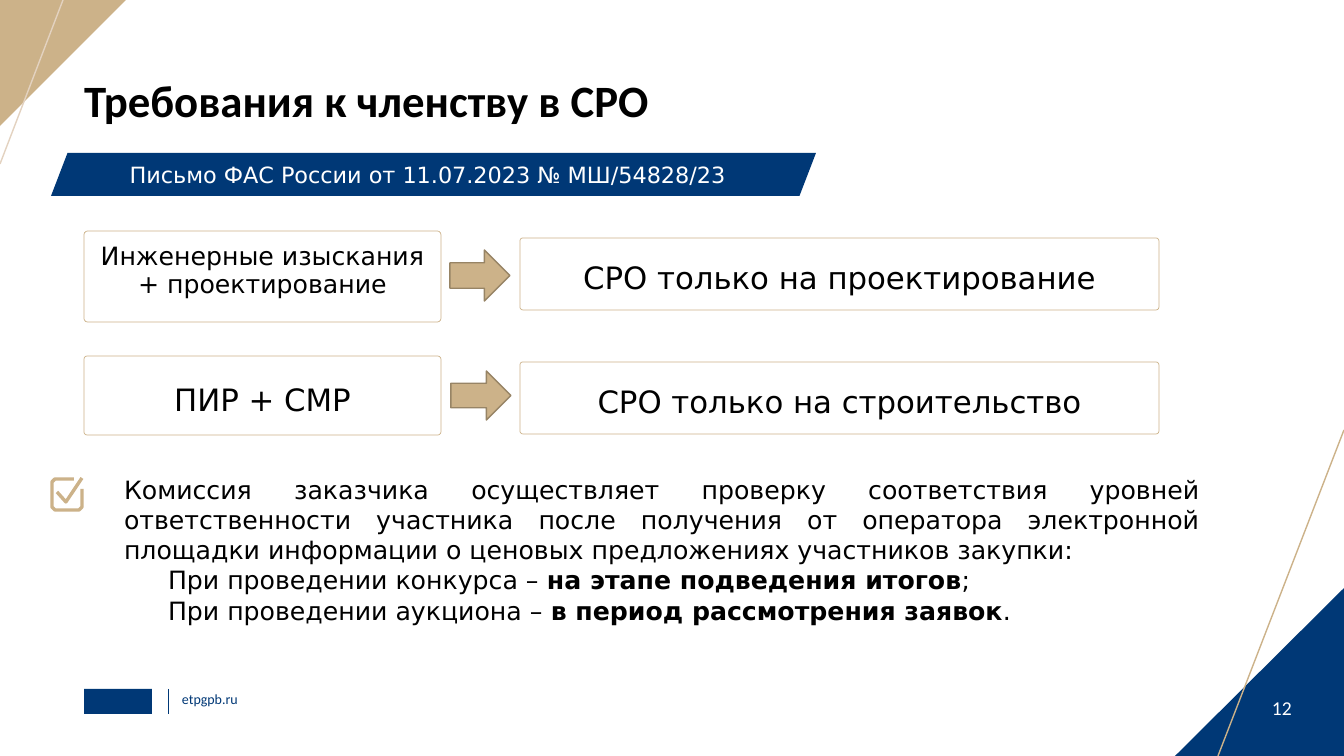
from lxml import etree
from pptx import Presentation
from pptx import util as u
from pptx.dml.color import RGBColor
from pptx.enum import shapes, text
from pptx.oxml.ns import qn

TITLE = "Требования к членству в СРО"
LETTER = "Письмо ФАС России от 11.07.2023 № МШ/54828/23"
# work lines, work size pt, work (top, height), arrow (left, top, height), result, result top
RULES = [
    (["Инженерные изыскания", "+ проектирование"], 18, (231, 91), (450, 250, 51),
     "СРО только на проектирование", 238),
    (["ПИР + СМР"], 22, (356, 79), (451, 371, 49),
     "СРО только на строительство", 362),
]
CHECK = ("Комиссия заказчика осуществляет проверку соответствия уровней "
         "ответственности участника после получения от оператора электронной "
         "площадки информации о ценовых предложениях участников закупки:")
STAGES = [
    ("При проведении конкурса – ", "на этапе подведения итогов", ";"),
    ("При проведении аукциона – ", "в период рассмотрения заявок", "."),
]
SITE, PAGE = "etpgpb.ru", "12"
CHECKBOX = [(74, 479), (55, 479), (52, 482), (52, 507), (55, 510),
            (79, 510), (82, 507), (82, 489)]
TICK = [(57, 492), (66, 502), (82, 478)]

COLORS = {"navy": "003876", "sand": "CCB289", "pale": "E3D2C0",
          "brown": "978465", "white": "FFFFFF", "black": "000000"}
HEAD, BODY = "Calibri", "DejaVu Sans"
PX = 914400 / 100.8
LEFT, CENTER, JUSTIFY = (text.PP_ALIGN.LEFT, text.PP_ALIGN.CENTER,
                         text.PP_ALIGN.JUSTIFY)
TOP, MIDDLE, BOTTOM = (text.MSO_ANCHOR.TOP, text.MSO_ANCHOR.MIDDLE,
                       text.MSO_ANCHOR.BOTTOM)
KIND = shapes.MSO_SHAPE


def px(*lengths):
    return [u.Emu(round(n * PX)) for n in lengths]


def rgb(name):
    return RGBColor.from_string(COLORS[name])


def outline(line, color, width):
    line.color.rgb = rgb(color)
    line.width = u.Pt(width)


def add_shape(kind, box, fill, border=None, width=1, adjust=None):
    shape = slide.shapes.add_shape(kind, *px(*box))
    shape.shadow.inherit = False
    shape.fill.solid()
    shape.fill.fore_color.rgb = rgb(fill)
    if border:
        outline(shape.line, border, width)
    else:
        shape.line.fill.background()
    if adjust is not None:
        shape.adjustments[0] = adjust
    return shape


def add_line(start, end, color, width=1):
    line = slide.shapes.add_connector(shapes.MSO_CONNECTOR.STRAIGHT,
                                      *px(*start, *end))
    outline(line.line, color, width)
    etree.SubElement(line._element.spPr, qn("a:effectLst"))


def write(shape, paragraphs, size, color="black", font=BODY, align=LEFT,
          anchor=TOP, insets=(0, 0, 0, 0), spacing=None):
    """Fill a shape; a paragraph is a string or a (plain, bold, plain) tuple."""
    frame = shape.text_frame
    frame.word_wrap = True
    frame.vertical_anchor = anchor
    (frame.margin_left, frame.margin_top,
     frame.margin_right, frame.margin_bottom) = px(*insets)
    for i, content in enumerate(paragraphs):
        p = frame.add_paragraph() if i else frame.paragraphs[0]
        p.alignment = align
        if spacing:
            p.line_spacing = spacing
        p.font.size, p.font.name = u.Pt(size), font
        p.font.color.rgb = rgb(color)
        if isinstance(content, str):
            p.add_run().text = content
            continue
        p._p.get_or_add_pPr().set("indent", str(px(44)[0]))
        for j, part in enumerate(content):
            run = p.add_run()
            run.text = part
            run.font.bold = j == 1


def add_text(box, *args, **kwargs):
    write(slide.shapes.add_textbox(*px(*box)), *args, **kwargs)


prs = Presentation()
prs.slide_width, prs.slide_height = px(1344, 756)
slide = prs.slides.add_slide(prs.slide_layouts[5])

# Corners and footer
add_shape(KIND.ISOSCELES_TRIANGLE, (1175, 588, 169, 168), "navy", adjust=1)
add_line((1344, 430), (1218, 756), "sand")
top_corner = add_shape(KIND.ISOSCELES_TRIANGLE, (0, 0, 126, 126), "sand", adjust=1)
top_corner.rotation = 180
add_line((63, 0), (0, 164), "pale")
add_text((1241, 683, 82, 36), [PAGE], 14, "white", HEAD, CENTER, BOTTOM)
add_shape(KIND.RECTANGLE, (84, 689, 68, 25), "navy")
add_line((168, 689), (168, 714), "navy", 0.5)
add_text((182, 691, 111, 17), [SITE], 10, "navy", HEAD)

# Heading
title = slide.shapes.title
title.left, title.top, title.width, title.height = px(84, 79, 1175, 48)
write(title, [TITLE], 32, font=HEAD, spacing=0.9)
title.text_frame.paragraphs[0].font.bold = True
banner = add_shape(KIND.PARALLELOGRAM, (51, 153, 765, 43), "navy", adjust=0.384)
write(banner, [LETTER], 16, "white", anchor=MIDDLE, insets=(8, 4, 8, 4))

# Kinds of work and the membership each one needs
for work, size, (top, height), arrow, result, result_top in RULES:
    arrow_left, arrow_top, arrow_height = arrow
    cards = [(work, size, (84, top, 357, height)),
             ([result], 22, (520, result_top, 639, 72))]
    for lines, points, box in cards:
        card = add_shape(KIND.ROUNDED_RECTANGLE, box, "white", "sand", 0.5, 0.04)
        write(card, lines, points, align=CENTER, spacing=0.9,
              anchor=TOP if len(lines) > 1 else MIDDLE, insets=(12, 12, 12, 0))
    add_shape(KIND.RIGHT_ARROW, (arrow_left, arrow_top, 60, arrow_height),
              "sand", "brown")

# Commission check
add_text((114, 469, 1096, 163), [CHECK, *STAGES], 18, align=JUSTIFY,
         insets=(10, 5, 10, 5))
builder = slide.shapes.build_freeform(*CHECKBOX[0], scale=PX)
builder.add_line_segments(CHECKBOX[1:], close=False)
builder.move_to(*TICK[0])
builder.add_line_segments(TICK[1:], close=False)
check_mark = builder.convert_to_shape()
check_mark.shadow.inherit = False
check_mark.fill.background()
outline(check_mark.line, "sand", 2.4)

prs.save("out.pptx")
